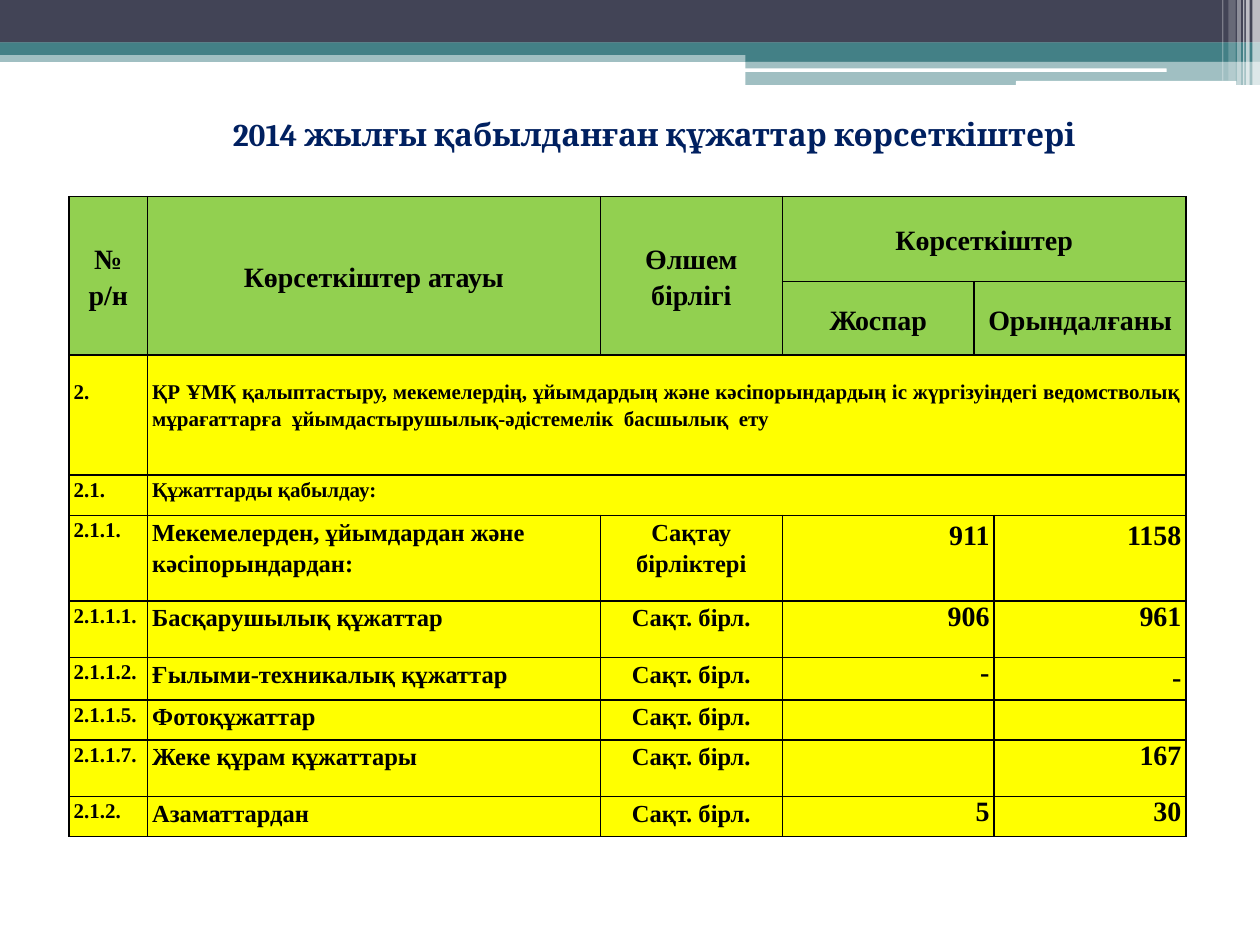
from dataclasses import dataclass

from lxml import etree
from pptx import Presentation
from pptx import util as u
from pptx.dml.color import RGBColor
from pptx.enum import shapes, text
from pptx.oxml import ns

SLATE = RGBColor(0x42, 0x44, 0x56)
TEAL = RGBColor(0x43, 0x80, 0x86)
WHITE = RGBColor(0xFF, 0xFF, 0xFF)
BLACK = RGBColor(0, 0, 0)
NAVY = RGBColor(0, 0x20, 0x60)
GREEN = RGBColor(0x92, 0xD0, 0x50)
YELLOW = RGBColor(0xFF, 0xFF, 0)

LEFT, CENTER = text.PP_ALIGN.LEFT, text.PP_ALIGN.CENTER
RIGHT, JUSTIFY = text.PP_ALIGN.RIGHT, text.PP_ALIGN.JUSTIFY
TOP, MIDDLE = text.MSO_ANCHOR.TOP, text.MSO_ANCHOR.MIDDLE
RECT = shapes.MSO_SHAPE.RECTANGLE
ROUND = shapes.MSO_SHAPE.ROUNDED_RECTANGLE

WIDTH, HEIGHT = 720, 540
COLUMN_WIDTHS = [44.9, 258.8, 104, 109.7, 11.4, 109.7]
ROW_HEIGHTS = [48.6, 42, 68.6, 23.1, 48.9, 32.3, 24.3, 22.9, 32.3, 22.9]


@dataclass
class Band:
    left: float
    top: float
    width: float
    height: float
    color: RGBColor
    opacity: int = 100
    preset: shapes.MSO_SHAPE = RECT


@dataclass
class Entry:
    row: int
    column: int
    wording: str
    size: float = 16
    align: text.PP_ALIGN = CENTER
    rows: int = 1
    columns: int = 1
    spacing: float = 1.15
    inset: float = 2.7
    inset_top: float = 0
    anchor: text.MSO_ANCHOR = TOP


@dataclass
class Indicator:
    number: str
    label: str
    unit: str
    plan: str
    done: str
    plan_spacing: float = 1
    done_spacing: float = 1


BANDS = [
    Band(0, 28.8, WIDTH, 6.6, TEAL, 50),
    Band(0, 0, WIDTH, 24.4, SLATE),
    Band(0, 24.2, WIDTH, 7.2, TEAL),
    Band(426, 28, 294, 7.2, TEAL),
    Band(426, 34.9, 294, 13.7, TEAL, 50),
    Band(425.5, 39.1, 241.2, 2, WHITE, 100, ROUND),
    Band(580.5, 46.3, 126, 2.6, WHITE, 100, ROUND),
    Band(715.7, 0, 4.3, 48.9, WHITE, 65),
    Band(712, 0, 2.1, 48.9, WHITE, 65),
    Band(710.4, 0, 0.8, 48.9, WHITE, 60),
    Band(707, 0, 2.1, 48.9, WHITE, 40),
    Band(702, 0, 4.2, 46.1, WHITE, 20),
    Band(698.4, 0, 0.8, 46.1, WHITE, 30),
]

HEADINGS = [
    Entry(0, 0, "№\nр/н", rows=2, anchor=MIDDLE),
    Entry(0, 1, "Көрсеткіштер атауы", rows=2, anchor=MIDDLE),
    Entry(0, 2, "Өлшем бірлігі", rows=2, anchor=MIDDLE),
    Entry(0, 3, "Көрсеткіштер", columns=3, anchor=MIDDLE),
    Entry(1, 3, "Жоспар", anchor=MIDDLE),
    Entry(1, 4, "Орындалғаны", columns=2, anchor=MIDDLE),
]

SECTIONS = [
    Entry(2, 0, "2.", 12, LEFT, inset_top=13),
    Entry(2, 1, "ҚР ҰМҚ қалыптастыру, мекемелердің, ұйымдардың және "
          "кәсіпорындардың іс жүргізуіндегі ведомстволық мұрағаттарға  "
          "ұйымдастырушылық-әдістемелік  басшылық  ету",
          12, JUSTIFY, columns=5, inset_top=13),
    Entry(3, 0, "2.1.", 12, LEFT),
    Entry(3, 1, "Құжаттарды қабылдау:", 12, LEFT, columns=5),
]

UNIT = "Сақт. бірл."
INDICATORS = [
    Indicator("2.1.1.", "Мекемелерден, ұйымдардан және кәсіпорындардан:",
              "Сақтау бірліктері", "911", "1158", 1.15, 1.15),
    Indicator("2.1.1.1.", "Басқарушылық құжаттар", UNIT, "906", "961"),
    Indicator("2.1.1.2.", "Ғылыми-техникалық құжаттар", UNIT, "-", "-", 1, 1.15),
    Indicator("2.1.1.5.", "Фотоқұжаттар", UNIT, "", ""),
    Indicator("2.1.1.7.", "Жеке құрам құжаттары", UNIT, "", "167"),
    Indicator("2.1.2.", "Азаматтардан", UNIT, "5", "30"),
]


def apply_format(target, values: dict) -> None:
    for attribute, value in values.items():
        setattr(target, attribute, value)


def format_font(font, face: str, size: float, color: RGBColor) -> None:
    apply_format(font, {"name": face, "size": u.Pt(size), "bold": True})
    font.color.rgb = color


def draw_band(slide, band: Band) -> None:
    bar = slide.shapes.add_shape(band.preset, u.Pt(band.left), u.Pt(band.top),
                                 u.Pt(band.width), u.Pt(band.height))
    bar.shadow.inherit = False
    bar.fill.solid()
    bar.fill.fore_color.rgb = band.color
    bar.line.fill.background()
    if band.opacity < 100:
        color = bar.fill._xPr.find(".//" + ns.qn("a:srgbClr"))
        etree.SubElement(color, ns.qn("a:alpha"), val=str(band.opacity * 1000))


def draw_borders(cell) -> None:
    properties = cell._tc.get_or_add_tcPr()
    for position, side in enumerate("LRTB"):
        border = etree.Element(ns.qn(f"a:ln{side}"), w=str(u.Pt(1)))
        fill = etree.SubElement(border, ns.qn("a:solidFill"))
        etree.SubElement(fill, ns.qn("a:srgbClr"), val=str(BLACK))
        properties.insert(position, border)


def fill_entry(table, entry: Entry) -> None:
    cell = table.cell(entry.row, entry.column)
    if entry.rows > 1 or entry.columns > 1:
        cell.merge(table.cell(entry.row + entry.rows - 1,
                              entry.column + entry.columns - 1))
    apply_format(cell, {"margin_left": u.Pt(entry.inset),
                        "margin_right": u.Pt(entry.inset),
                        "margin_top": u.Pt(entry.inset_top),
                        "vertical_anchor": entry.anchor})
    if not entry.wording:
        return
    cell.text_frame.text = entry.wording
    for paragraph in cell.text_frame.paragraphs:
        apply_format(paragraph, {"alignment": entry.align,
                                 "line_spacing": entry.spacing})
        format_font(paragraph.runs[0].font, "Times New Roman", entry.size, BLACK)


def indicator_entries(row: int, item: Indicator) -> list[Entry]:
    return [
        Entry(row, 0, item.number, 12, LEFT),
        Entry(row, 1, item.label, 14, LEFT),
        Entry(row, 2, item.unit, 14),
        Entry(row, 3, item.plan, 16, RIGHT, columns=2, spacing=item.plan_spacing),
        Entry(row, 5, item.done, 16, RIGHT, spacing=item.done_spacing),
    ]


def draw_table(slide) -> None:
    frame = slide.shapes.add_table(
        len(ROW_HEIGHTS), len(COLUMN_WIDTHS), u.Pt(39.4), u.Pt(112.3),
        u.Pt(sum(COLUMN_WIDTHS)), u.Pt(sum(ROW_HEIGHTS)))
    table = frame.table
    apply_format(table, {"first_row": False, "horz_banding": False})
    for column, width in zip(table.columns, COLUMN_WIDTHS):
        column.width = u.Pt(width)
    for index, (row, height) in enumerate(zip(table.rows, ROW_HEIGHTS)):
        row.height = u.Pt(height)
        for cell in row.cells:
            apply_format(cell, {"margin_top": 0, "margin_bottom": 0})
            cell.fill.solid()
            cell.fill.fore_color.rgb = GREEN if index < 2 else YELLOW
            draw_borders(cell)
    entries = HEADINGS + SECTIONS
    for row, item in enumerate(INDICATORS, start=4):
        entries = entries + indicator_entries(row, item)
    for entry in entries:
        fill_entry(table, entry)


def draw_title(slide) -> None:
    title = slide.shapes.title
    apply_format(title, {"left": u.Pt(123.8), "top": u.Pt(62),
                         "width": u.Pt(500.4), "height": u.Pt(51)})
    title.text_frame.text = "2014 жылғы қабылданған құжаттар көрсеткіштері"
    apply_format(title.text_frame, {"vertical_anchor": TOP, "word_wrap": True})
    heading = title.text_frame.paragraphs[0]
    heading.alignment = CENTER
    format_font(heading.runs[0].font, "Cambria", 18, NAVY)


def main() -> None:
    deck = Presentation()
    apply_format(deck, {"slide_width": u.Pt(WIDTH), "slide_height": u.Pt(HEIGHT)})
    slide = deck.slides.add_slide(deck.slide_layouts[5])
    for band in BANDS:
        draw_band(slide, band)
    draw_table(slide)
    draw_title(slide)
    deck.save("out.pptx")


if __name__ == "__main__":
    main()
